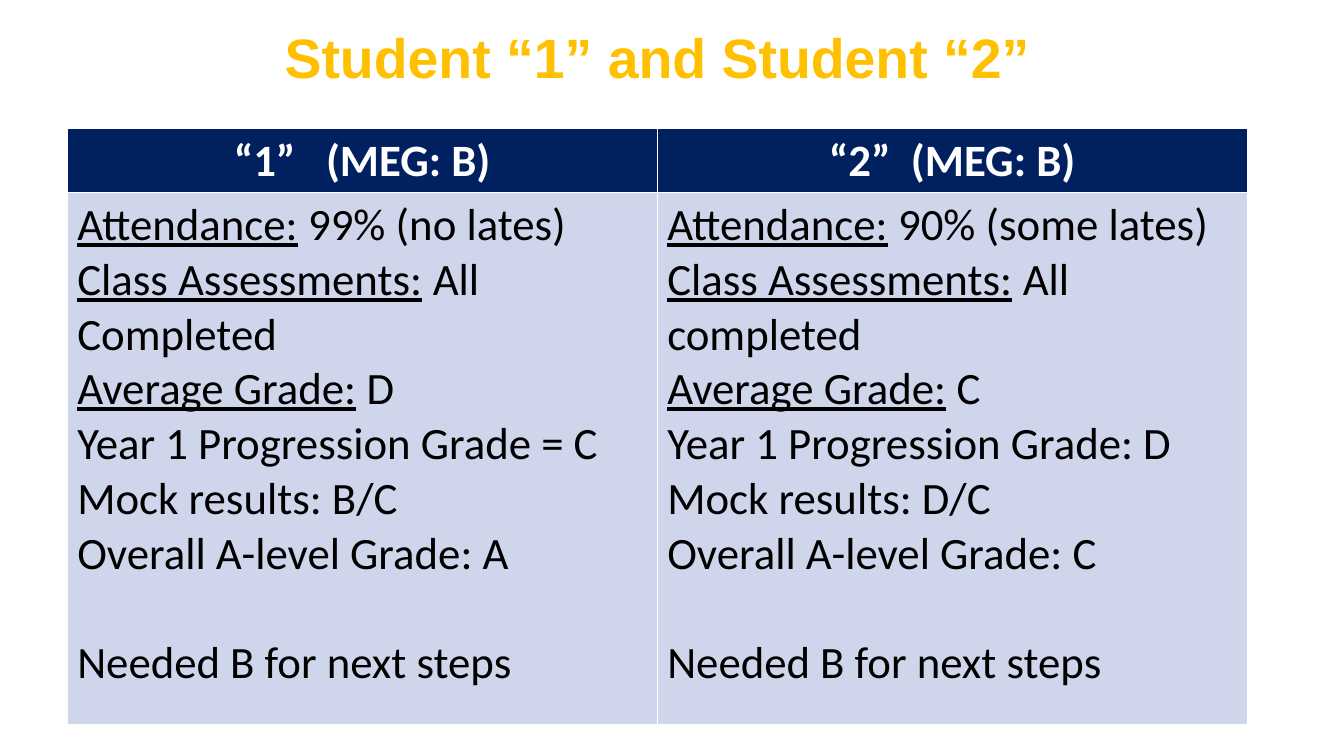
"""Build a slide comparing the results of two students in a table."""
from dataclasses import dataclass

from pptx import Presentation
from pptx.dml.color import RGBColor
from pptx.enum.text import MSO_ANCHOR, PP_ALIGN
from pptx.slide import Slide
from pptx.table import _Cell as Cell
from pptx.text.text import _Paragraph as Paragraph, _Run as Run
from pptx.util import Inches, Pt

GOLD = RGBColor(0xFF, 0xC0, 0x00)
NAVY = RGBColor(0x00, 0x20, 0x60)
PALE_BLUE = RGBColor(0xCF, 0xD5, 0xEA)
WHITE = RGBColor(0xFF, 0xFF, 0xFF)
BLACK = RGBColor(0x00, 0x00, 0x00)

SLIDE_WIDTH, SLIDE_HEIGHT = Inches(13.33), Inches(7.5)
TABLE_LEFT, TABLE_TOP = 0.05, 0.17
COLUMN_WIDTH = 0.439
HEADER_HEIGHT, BODY_HEIGHT = 0.085, 0.703
TEXT_SIZE = 32
LINE_HEIGHT = 39


@dataclass(frozen=True)
class Student:
    name: str
    name_gap: float
    attendance: str
    assessments: str
    average: str
    results: tuple[str, ...]


STUDENTS = (
    Student("“1”", 14.5, "99% (no lates)", "All Completed", "D",
            ("Year 1 Progression Grade = C", "Mock results: B/C", "Overall A-level Grade: A")),
    Student("“2”", 7.25, "90% (some lates)", "All completed", "C",
            ("Year 1 Progression Grade: D", "Mock results: D/C", "Overall A-level Grade: C")),
)


def add_text(paragraph: Paragraph, text: str, color: RGBColor,
             bold: bool = False, underline: bool = False) -> Run:
    run = paragraph.add_run()
    run.text = text
    font = run.font
    font.name, font.size = "Calibri", Pt(TEXT_SIZE)
    font.bold, font.underline = bold, underline
    font.color.rgb = color
    return run


def add_labelled(paragraph: Paragraph, label: str, value: str) -> None:
    add_text(paragraph, label, BLACK, underline=True)
    add_text(paragraph, f" {value}", BLACK)


def fill_cell(cell: Cell, color: RGBColor) -> None:
    cell.fill.solid()
    cell.fill.fore_color.rgb = color


def write_header(cell: Cell, student: Student) -> None:
    fill_cell(cell, NAVY)
    paragraph = cell.text_frame.paragraphs[0]
    paragraph.alignment = PP_ALIGN.CENTER
    add_text(paragraph, student.name, WHITE, bold=True)
    space = add_text(paragraph, " ", WHITE, bold=True)
    space._r.get_or_add_rPr().set("spc", str(round(student.name_gap * 100)))
    add_text(paragraph, "(MEG: B)", WHITE, bold=True)


def write_body(cell: Cell, student: Student) -> None:
    fill_cell(cell, PALE_BLUE)
    frame = cell.text_frame
    first = frame.paragraphs[0]
    add_labelled(first, "Attendance:", student.attendance)
    first.add_line_break()
    add_labelled(first, "Class Assessments:", student.assessments)
    add_labelled(frame.add_paragraph(), "Average Grade:", student.average)
    for result in student.results:
        add_text(frame.add_paragraph(), result, BLACK)
    conclusion = frame.add_paragraph()
    conclusion.space_before = Pt(LINE_HEIGHT)
    add_text(conclusion, "Needed B for next steps", BLACK)


def add_title(slide: Slide, title: str) -> None:
    box = slide.shapes.add_textbox(Inches(2.02), Inches(0.41), Inches(9), Inches(0.39))
    frame = box.text_frame
    frame.word_wrap = True
    frame.vertical_anchor = MSO_ANCHOR.MIDDLE
    frame.text = title
    paragraph = frame.paragraphs[0]
    paragraph.alignment = PP_ALIGN.CENTER
    paragraph.line_spacing = 0.9
    font = paragraph.runs[0].font
    font.name, font.size, font.bold = "Arial", Pt(39.6), True
    font.color.rgb = GOLD


def add_student_table(slide: Slide, students: tuple[Student, ...]) -> None:
    heights = [round(SLIDE_HEIGHT * share) for share in (HEADER_HEIGHT, BODY_HEIGHT)]
    width = round(SLIDE_WIDTH * COLUMN_WIDTH)
    table = slide.shapes.add_table(
        len(heights), len(students), round(SLIDE_WIDTH * TABLE_LEFT),
        round(SLIDE_HEIGHT * TABLE_TOP), width * len(students), sum(heights)).table
    for row, height in zip(table.rows, heights):
        row.height = height
    for column, student in enumerate(students):
        table.columns[column].width = width
        write_header(table.cell(0, column), student)
        write_body(table.cell(1, column), student)


def main() -> None:
    presentation = Presentation()
    presentation.slide_width, presentation.slide_height = SLIDE_WIDTH, SLIDE_HEIGHT
    slide = presentation.slides.add_slide(presentation.slide_layouts[6])
    add_title(slide, "Student “1” and Student “2”")
    add_student_table(slide, STUDENTS)
    presentation.save("out.pptx")


if __name__ == "__main__":
    main()
